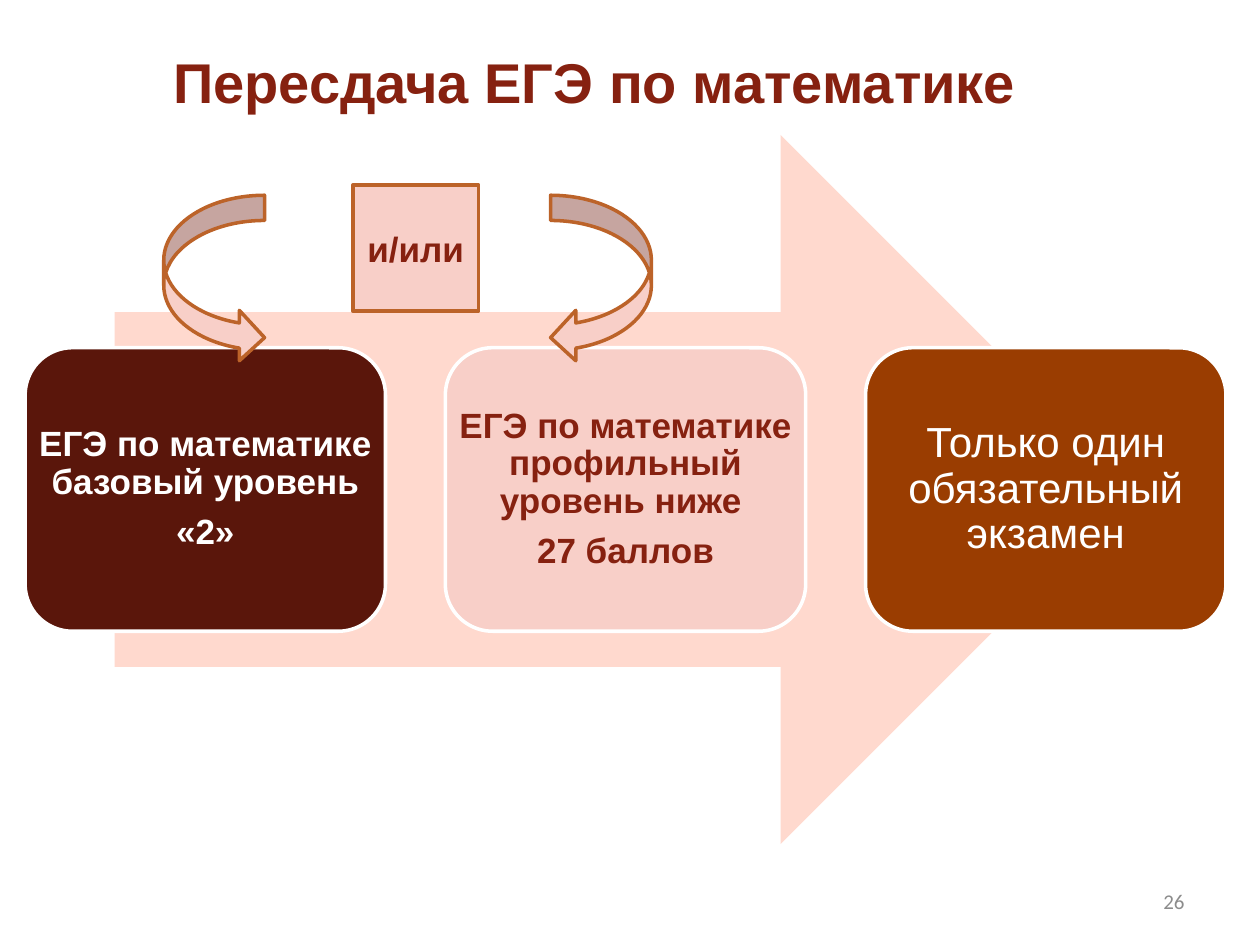
import pptx
import pptx.util
import pptx.dml.color
import pptx.enum.shapes
import pptx.enum.text

Inches = pptx.util.Inches
Pt = pptx.util.Pt
KIND = pptx.enum.shapes.MSO_SHAPE
ALIGN = pptx.enum.text.PP_ALIGN

HUES = {
    "white": "FFFFFF",
    "red": "862110",
    "dark": "5A160B",
    "pink": "F8CFC8",
    "peach": "FFD9CE",
    "brown": "9A3D01",
    "edge": "BC6329",
    "gray": "8C8C8C",
}


def hue(name):
    return pptx.dml.color.RGBColor.from_string(HUES[name])


def add_shape(slide, kind, box, fill, line=None):
    shape = slide.shapes.add_shape(kind, *map(Inches, box))
    shape.shadow.inherit = False
    shape.fill.solid()
    shape.fill.fore_color.rgb = hue(fill)
    if line:
        shape.line.color.rgb = hue(line)
        shape.line.width = Pt(2)
    else:
        shape.line.fill.background()
    return shape


def set_text(shape, lines, size, color, bold=False, align=ALIGN.CENTER, font="Arial"):
    frame = shape.text_frame
    frame.word_wrap = True
    frame.vertical_anchor = pptx.enum.text.MSO_ANCHOR.MIDDLE
    frame.text = "\n".join(lines)
    for para in frame.paragraphs:
        para.alignment = align
        for run in para.runs:
            run.font.name = font
            run.font.size = Pt(size)
            run.font.bold = bold
            run.font.color.rgb = hue(color)
    return frame


def add_text(slide, box, lines, *style, **more):
    return set_text(slide.shapes.add_textbox(*map(Inches, box)), lines, *style, **more)


def add_card(slide, box, fill, lines, size, color, bold, inset):
    add_shape(slide, KIND.ROUNDED_RECTANGLE, box, fill, "white")
    # The label spans the whole card, beyond the rounded corners' text area
    frame = add_text(slide, box, lines, size, color, bold)
    frame.margin_left = frame.margin_right = Inches(inset)
    frame.margin_top = frame.margin_bottom = Inches(inset)
    for para in frame.paragraphs:
        para.line_spacing = 0.9
        para.space_after = Pt(size * 0.35)


def main():
    deck = pptx.Presentation()
    deck.slide_width, deck.slide_height = Inches(10), Inches(7.5)
    slide = deck.slides.add_slide(deck.slide_layouts[6])

    # Title
    add_text(slide, (0.5, 0.3, 8.44, 0.69), ["Пересдача ЕГЭ по математике"],
             32, "red", True)

    # Wide arrow behind the cards
    add_shape(slide, KIND.RIGHT_ARROW, (0.91, 1.07, 8.1, 5.63), "peach")

    # Three cards at an equal pitch
    cards = [
        ("dark", ["ЕГЭ по математике базовый уровень", "«2»"],
         20, "white", True, 0.08),
        ("pink", ["ЕГЭ по математике профильный уровень ниже ", "27 баллов"],
         20, "red", True, 0.08),
        ("brown", ["Только один обязательный экзамен"],
         24, "white", False, 0.1),
    ]
    left, pitch = 0.2, 3.335
    for i, card in enumerate(cards):
        add_card(slide, (left + i * pitch, 2.76, 2.86, 2.25), *card)

    # Slide number
    add_text(slide, (7.17, 6.95, 2.33, 0.4), ["26"], 12, "gray",
             align=ALIGN.RIGHT, font="Calibri")

    # Choice box and its two curved arrows
    choice = add_shape(slide, KIND.RECTANGLE, (2.8, 1.47, 1, 1), "pink", "edge")
    set_text(choice, ["и/или"], 20, "red", True)
    for kind, x in ((KIND.CURVED_RIGHT_ARROW, 1.3), (KIND.CURVED_LEFT_ARROW, 4.37)):
        add_shape(slide, kind, (x, 1.55, 0.8, 1.33), "pink", "edge")

    deck.save("out.pptx")


if __name__ == "__main__":
    main()
